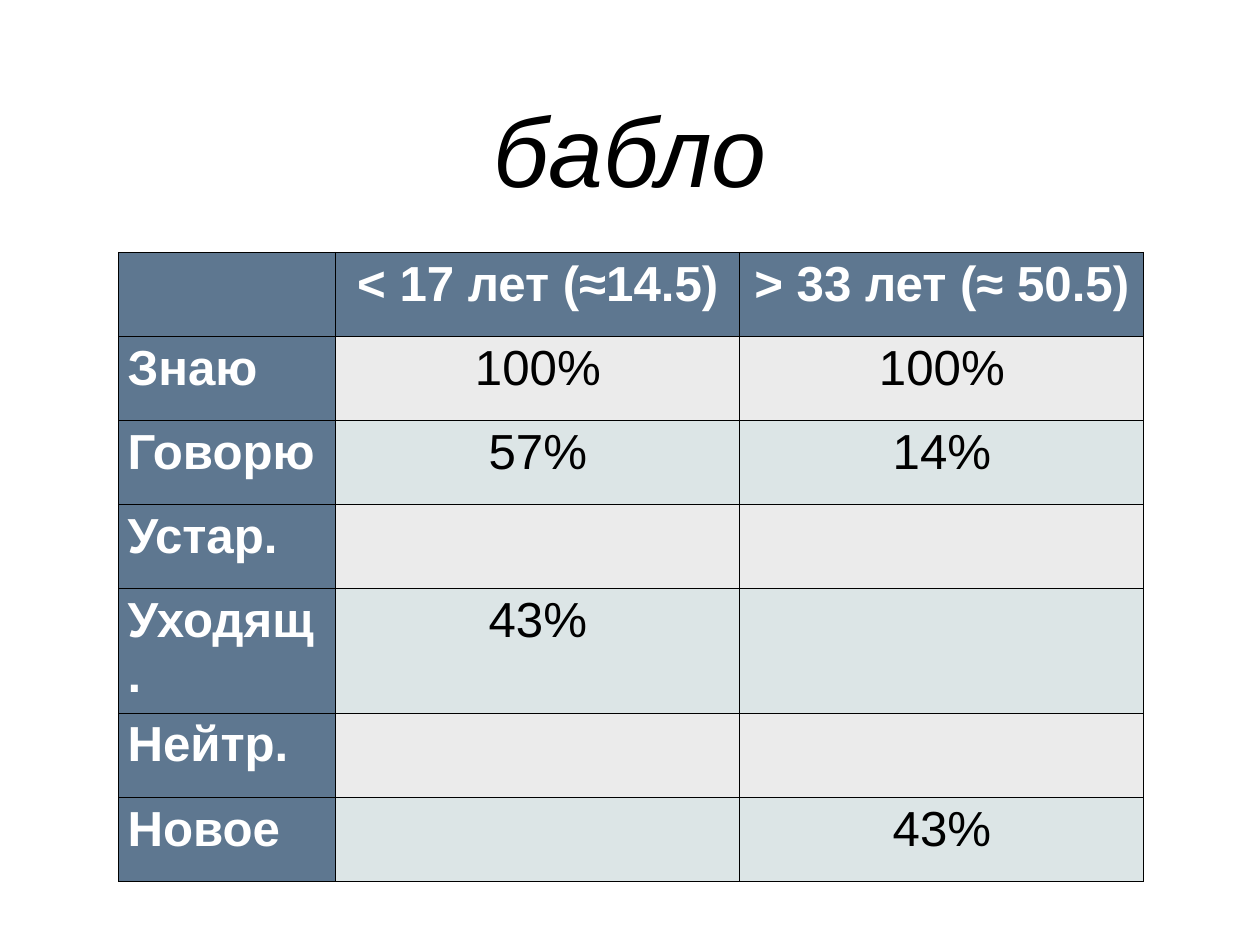
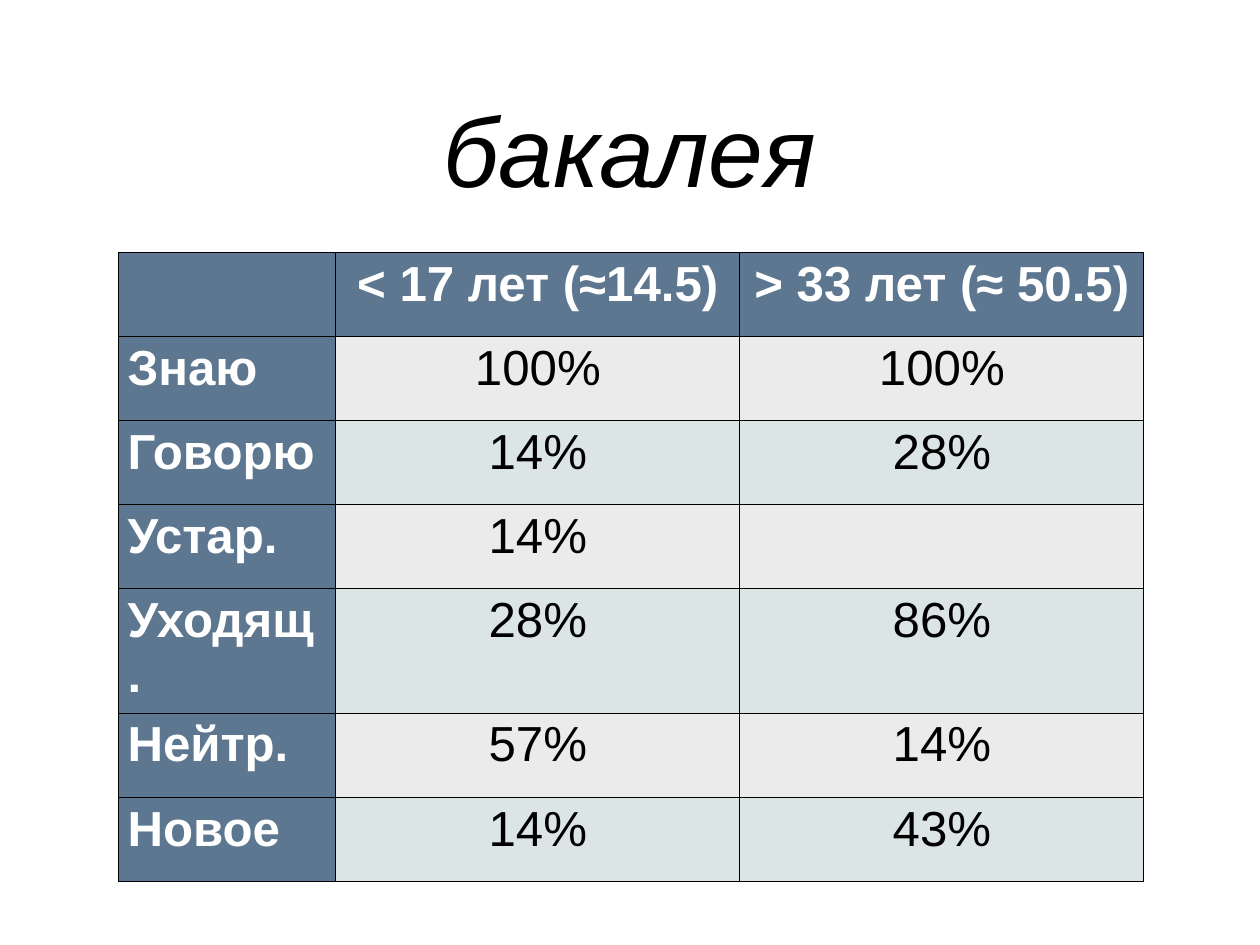
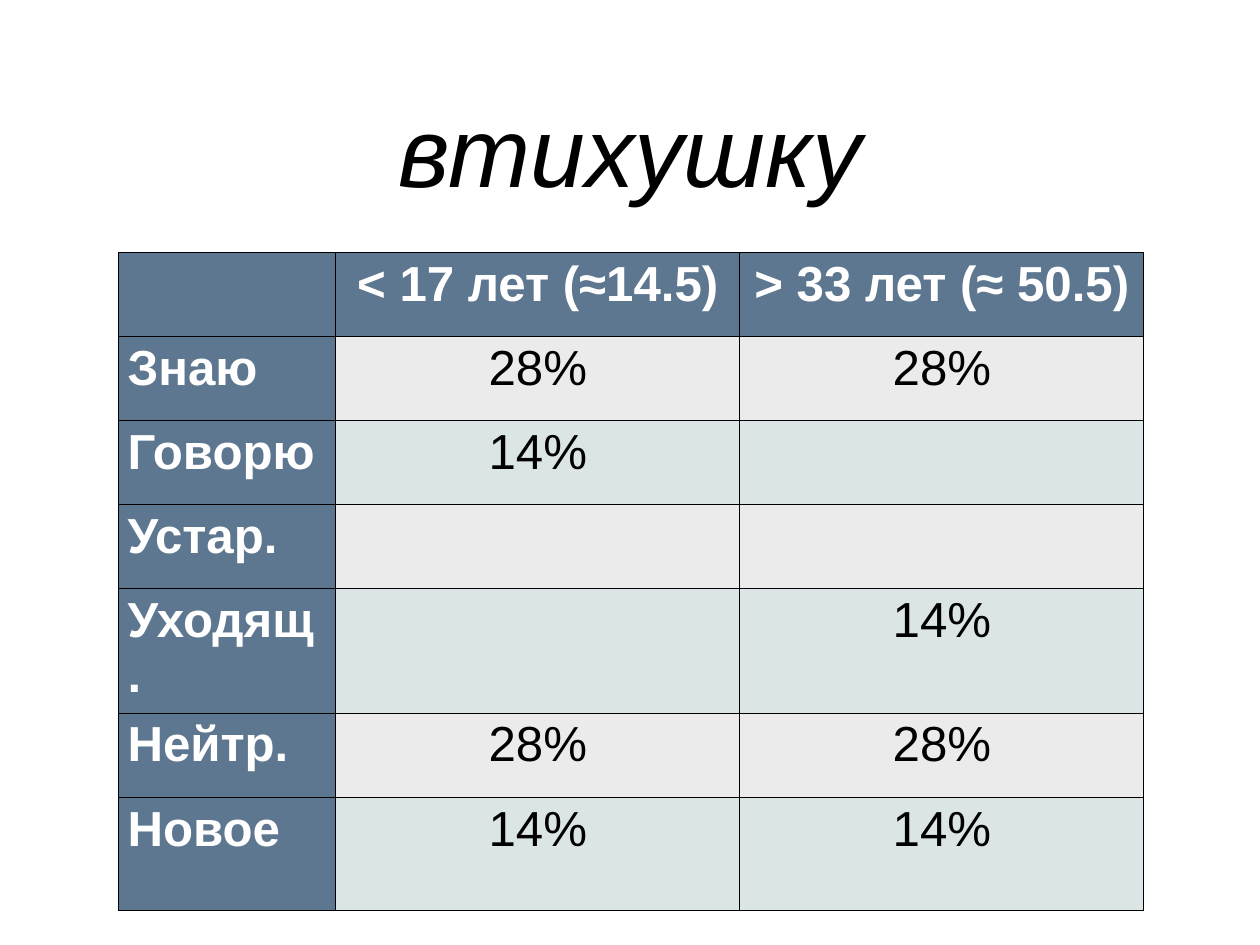
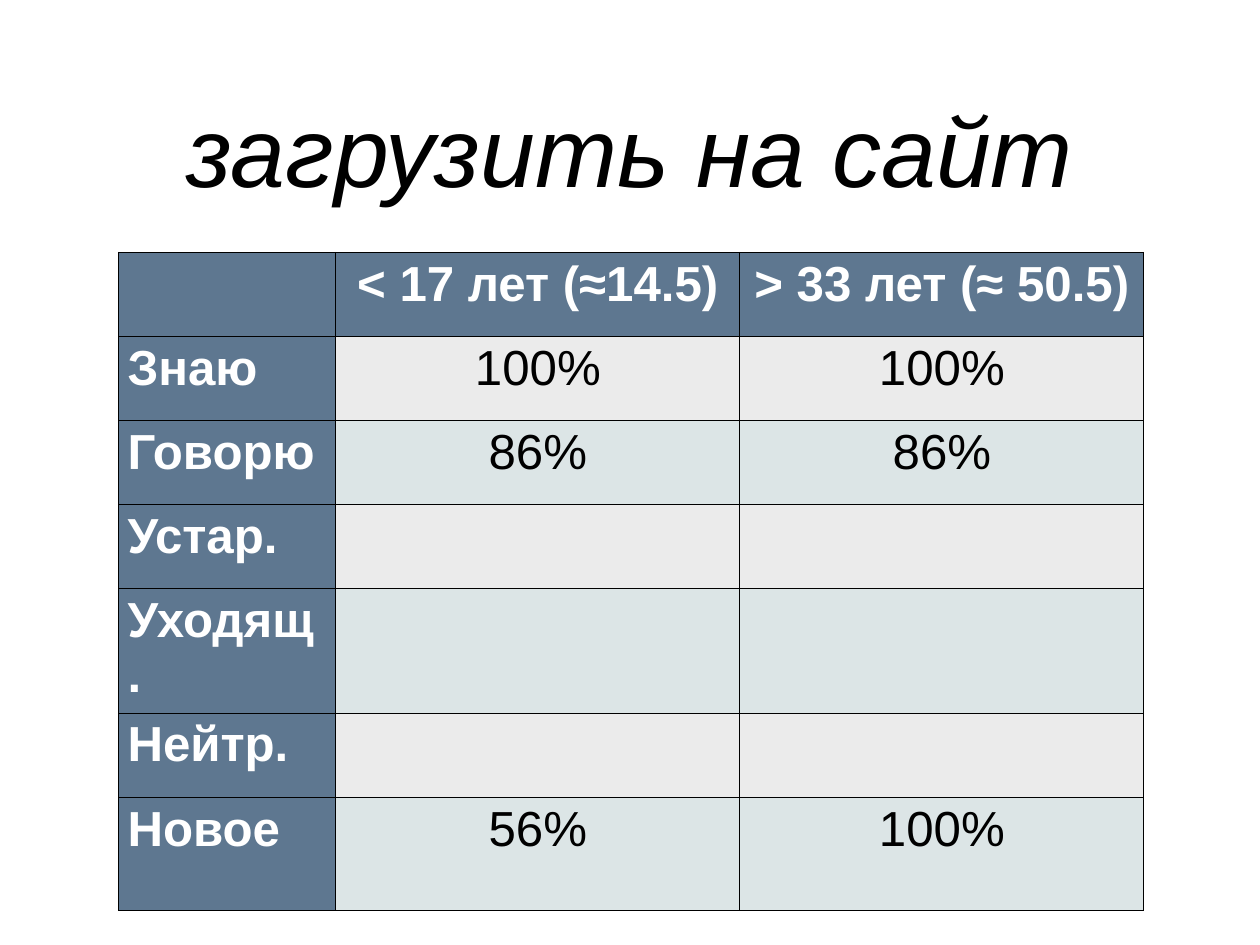
from lxml.etree import SubElement
from pptx import Presentation
from pptx.dml.color import RGBColor
from pptx.enum.text import MSO_ANCHOR, PP_ALIGN
from pptx.oxml.ns import qn
from pptx.util import Inches, Pt

BLACK = RGBColor(0x00, 0x00, 0x00)
WHITE = RGBColor(0xFF, 0xFF, 0xFF)
HEADER = RGBColor(0x5E, 0x77, 0x90)
BANDS = (RGBColor(0xEB, 0xEB, 0xEB), RGBColor(0xDC, 0xE5, 0xE6))
FONT = "Arial"

# Wording shared by every table
AGE_GROUPS = ("", "< 17 лет (≈14.5)", "> 33 лет (≈ 50.5)")
ANSWERS = ("Знаю", "Говорю", "Устар.", "Уходящ.", "Нейтр.", "Новое")

# Word, shares of the younger, shares of the older, height of the last row
WORDS = (
    ("бабло", ("100%", "57%", "", "43%", "", ""),
     ("100%", "14%", "", "", "", "43%"), 8.9),
    ("бакалея", ("100%", "14%", "14%", "28%", "57%", "14%"),
     ("100%", "28%", "", "86%", "14%", "43%"), 8.9),
    ("втихушку", ("28%", "14%", "", "", "28%", "14%"),
     ("28%", "", "", "14%", "28%", "14%"), 12),
    ("загрузить на сайт", ("100%", "86%", "", "", "", "56%"),
     ("100%", "86%", "", "", "", "100%"), 12),
)


def write(frame, text, size=40, color=BLACK, bold=False, italic=False,
          align=PP_ALIGN.CENTER):
    paragraph = frame.paragraphs[0]
    paragraph.alignment = align
    if not text:
        paragraph.font.size = Pt(size)
        return
    run = paragraph.add_run()
    run.text = text
    font = run.font
    font.name, font.size = FONT, Pt(size)
    font.bold, font.italic = bold, italic
    font.color.rgb = color


class Deck:
    """Holds the style and the current slide; lengths are percent of its size."""

    def __init__(self, width, height):
        self.file = Presentation()
        self.file.slide_width = Inches(width)
        self.file.slide_height = Inches(height)
        self.slide = None

    def x(self, share):
        return round(self.file.slide_width * share / 100)

    def y(self, share):
        return round(self.file.slide_height * share / 100)

    def box(self, left, top, width, height):
        return self.x(left), self.y(top), self.x(width), self.y(height)

    def new_slide(self):
        self.slide = self.file.slides.add_slide(self.file.slide_layouts[6])

    def title(self, text):
        frame = self.slide.shapes.add_textbox(*self.box(7.31, 4.59, 85.37, 22.12)).text_frame
        frame.word_wrap = True
        frame.vertical_anchor = MSO_ANCHOR.MIDDLE
        frame.margin_left = frame.margin_right = 0
        frame.margin_top = frame.margin_bottom = 0
        write(frame, text, size=80, italic=True)

    def table(self, rows, columns, row_heights):
        area = self.box(9.42, 26.71, sum(columns), sum(row_heights))
        table = self.slide.shapes.add_table(len(rows), len(columns), *area).table
        for column, share in zip(table.columns, columns):
            column.width = self.x(share)
        for row, share in zip(table.rows, row_heights):
            row.height = self.y(share)
        for r, texts in enumerate(rows):
            for c, text in enumerate(texts):
                self.cell(table.cell(r, c), text, r, c)

    def cell(self, cell, text, r, c):
        heading = r == 0 or c == 0
        cell.margin_top, cell.margin_bottom = Inches(0.05), Inches(0.02)
        self.borders(cell)
        cell.fill.solid()
        cell.fill.fore_color.rgb = HEADER if heading else BANDS[(r - 1) % 2]
        write(cell.text_frame, text, bold=heading,
              color=WHITE if heading else BLACK,
              align=PP_ALIGN.CENTER if c else PP_ALIGN.LEFT)

    def borders(self, cell):
        # Borders come before the fill in the cell properties
        properties = cell._tc.get_or_add_tcPr()
        for side in ("a:lnL", "a:lnR", "a:lnT", "a:lnB"):
            line = SubElement(properties, qn(side), w=str(Pt(1)))
            fill = SubElement(line, qn("a:solidFill"))
            SubElement(fill, qn("a:srgbClr"), val=str(BLACK))


def main():
    deck = Deck(14.22, 10.67)
    for word, younger, older, last_row in WORDS:
        deck.new_slide()
        deck.title(word)
        deck.table([AGE_GROUPS, *zip(ANSWERS, younger, older)],
                   columns=(17.23, 32.07, 32.07),
                   row_heights=[8.9] * len(ANSWERS) + [last_row])
    deck.file.save("out.pptx")


if __name__ == "__main__":
    main()
